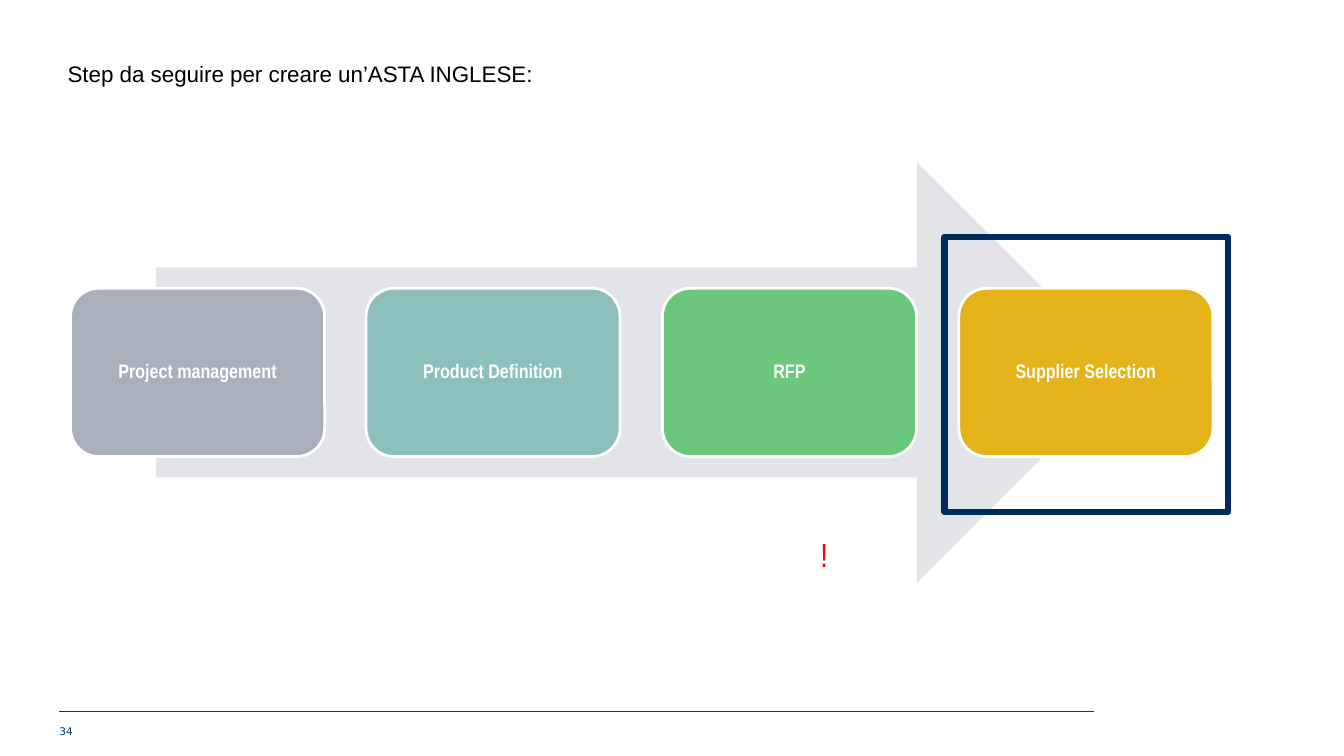
from dataclasses import dataclass

from lxml.etree import SubElement
from pptx import Presentation
from pptx.dml.color import RGBColor
from pptx.enum.shapes import MSO_CONNECTOR as Connector, MSO_SHAPE as Preset
from pptx.enum.text import MSO_ANCHOR as Anchor, MSO_AUTO_SIZE as AutoSize, PP_ALIGN as Align
from pptx.oxml.ns import qn
from pptx.util import Pt

EMU_PER_PX = 9144  # 100 px to the inch


@dataclass(frozen=True)
class Theme:
    black: str = "000000"
    white: str = "FFFFFF"
    alert: str = "FF0000"
    footer: str = "003B7E"
    arrow: str = "E2E4E7"
    highlight: str = "002C5D"
    title_font: str = "Arial"
    label_font: str = "Arial Narrow"
    number_font: str = "DejaVu Sans"
    title_size: float = 16
    step_size: float = 14
    alert_size: float = 24
    number_size: float = 7.5


THEME = Theme()
STEPS = [
    ("Project management", "AAB0BB"),
    ("Product Definition", "8CBFBB"),
    ("RFP", "6AC77C"),
    ("Supplier Selection", "E4B219"),
]
FIRST_STEP_LEFT, LAST_STEP_LEFT = 70, 951


def px(*lengths):
    return [length * EMU_PER_PX for length in lengths]


def rgb(color):
    return RGBColor.from_string(color)


def write(frame, text, font, size, color, bold=False, align=Align.LEFT,
          anchor=Anchor.TOP, inset=None):
    """Put one formatted run in the frame; inset in px applies to all sides."""
    frame.word_wrap = True
    frame.auto_size = AutoSize.NONE
    frame.vertical_anchor = anchor
    if inset is not None:
        margin, = px(inset)
        frame.margin_left = frame.margin_right = margin
        frame.margin_top = frame.margin_bottom = margin
    paragraph = frame.paragraphs[0]
    paragraph.alignment = align
    run = paragraph.add_run()
    run.text = text
    run.font.name = font
    run.font.size = Pt(size)
    run.font.bold = bold
    run.font.color.rgb = rgb(color)
    return paragraph


def add_title(slide, text, box):
    title = slide.shapes.title
    title.left, title.top, title.width, title.height = px(*box)
    write(title.text_frame, text, THEME.title_font, THEME.title_size, THEME.black)


def add_label(slide, text, box, **style):
    label = slide.shapes.add_textbox(*px(*box))
    write(label.text_frame, text, **style)


def add_block(slide, preset, box, fill=None, line=None, line_width=0):
    block = slide.shapes.add_shape(preset, *px(*box))
    block.shadow.inherit = False
    if fill:
        block.fill.solid()
        block.fill.fore_color.rgb = rgb(fill)
    else:
        block.fill.background()
    if line:
        block.line.color.rgb = rgb(line)
        block.line.width = Pt(line_width)
    else:
        block.line.fill.background()
    return block


def add_step(slide, text, color, left):
    step = add_block(slide, Preset.ROUNDED_RECTANGLE, (left, 286, 252, 167),
                     color, THEME.white, 2)
    paragraph = write(step.text_frame, text, THEME.label_font, THEME.step_size,
                      THEME.white, bold=True, align=Align.CENTER,
                      anchor=Anchor.MIDDLE, inset=6)
    paragraph.line_spacing = 0.9


def add_rule(slide, left, right, y):
    rule = slide.shapes.add_connector(Connector.STRAIGHT, *px(left, y, right, y))
    rule.line.color.rgb = rgb(THEME.footer)
    rule.line.width = Pt(0.5)
    SubElement(rule.line._get_or_add_ln().getparent(), qn("a:effectLst"))


def main():
    deck = Presentation()
    deck.slide_width, deck.slide_height = px(1333, 750)
    slide = deck.slides.add_slide(deck.slide_layouts[5])

    add_title(slide, "Step da seguire per creare un’ASTA INGLESE:", (57, 55, 1012, 84))
    add_rule(slide, 59, 1085, 706)
    add_label(slide, "34", (59, 719, 23, 24), font=THEME.number_font,
              size=THEME.number_size, color=THEME.footer, inset=0)
    add_label(slide, "!", (777, 525, 81, 50), font=THEME.label_font,
              size=THEME.alert_size, color=THEME.alert, align=Align.CENTER)

    add_block(slide, Preset.RIGHT_ARROW, (155, 161, 963, 417), THEME.arrow)
    travel = LAST_STEP_LEFT - FIRST_STEP_LEFT
    for index, (text, color) in enumerate(STEPS):
        left = FIRST_STEP_LEFT + travel * index // (len(STEPS) - 1)
        add_step(slide, text, color, left)
    add_block(slide, Preset.RECTANGLE, (937, 235, 281, 273),
              line=THEME.highlight, line_width=4.75)

    deck.save("out.pptx")


if __name__ == "__main__":
    main()
